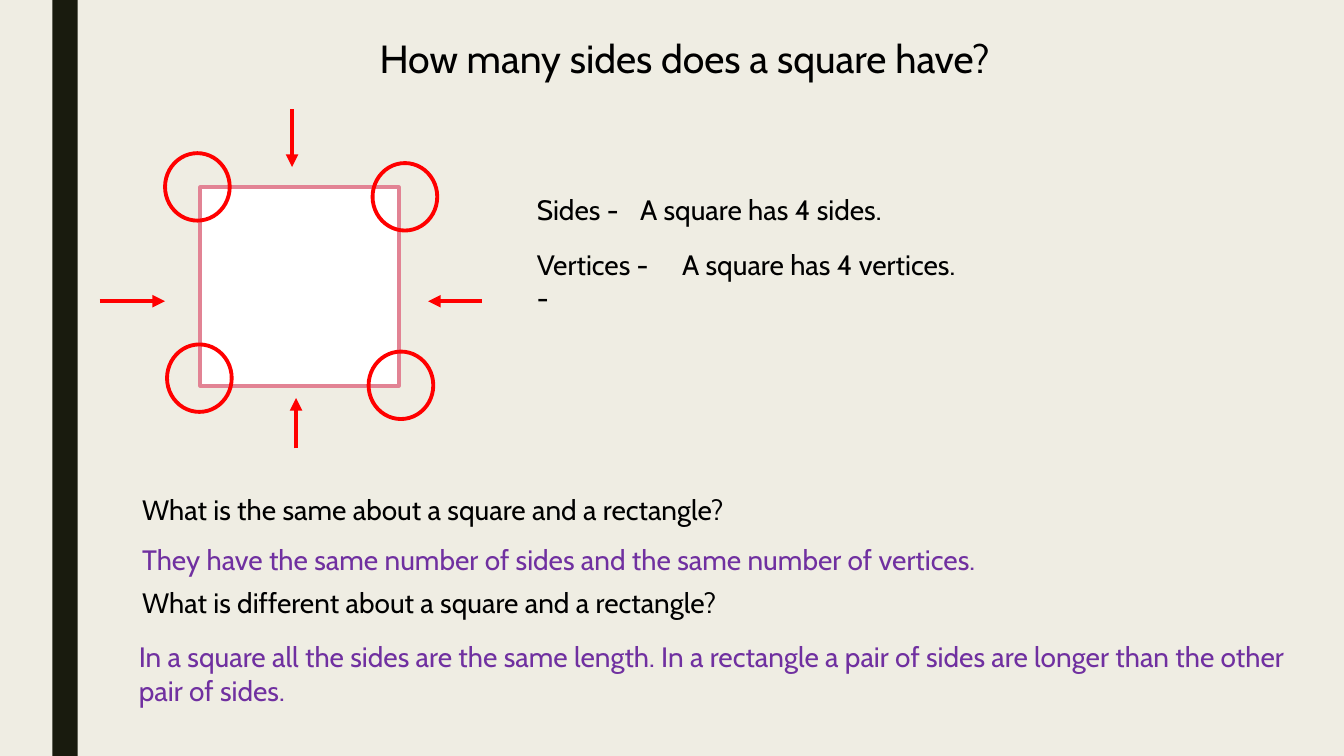
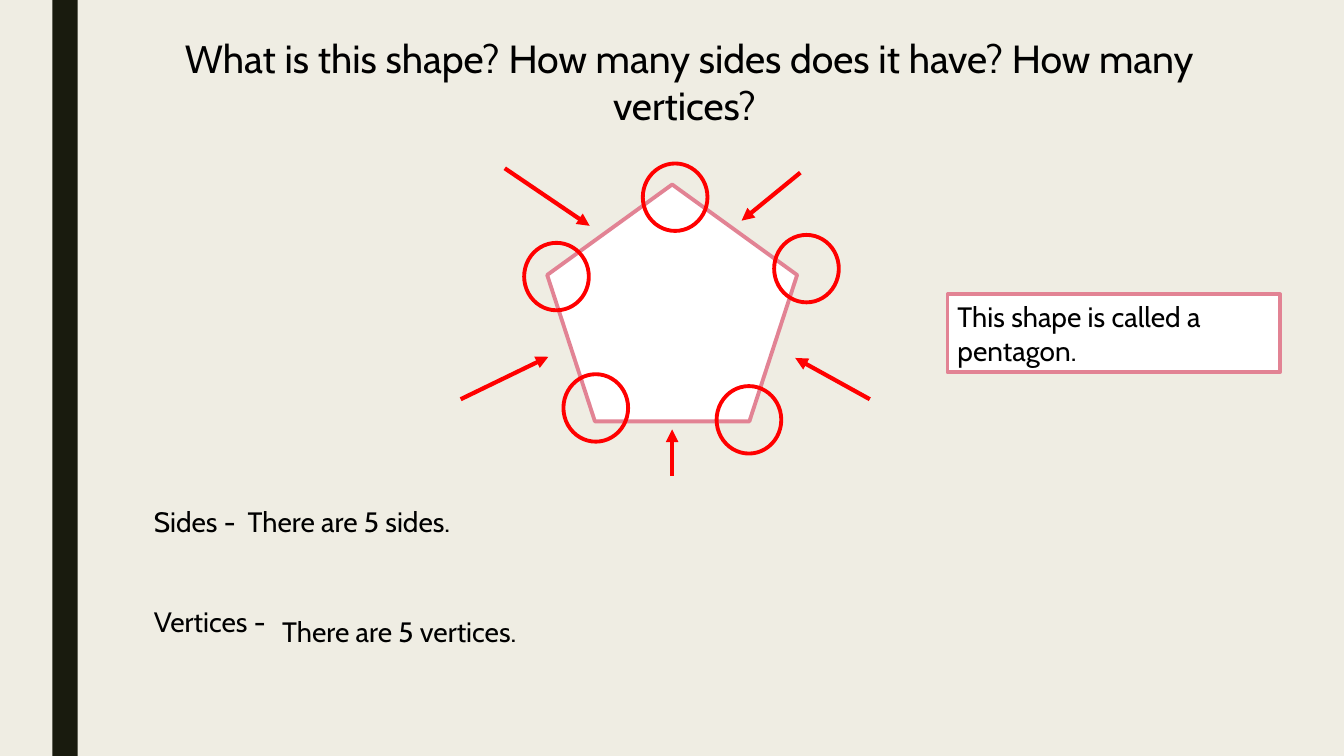
import pptx
import pptx.util
import pptx.dml.color
import pptx.enum.shapes
import pptx.enum.text
import pptx.oxml
import pptx.oxml.ns

Cm, Pt = pptx.util.Cm, pptx.util.Pt
RGBColor = pptx.dml.color.RGBColor
SHAPE = pptx.enum.shapes.MSO_SHAPE
ALIGN = pptx.enum.text.PP_ALIGN

CREAM = RGBColor(0xEF, 0xED, 0xE3)
DARK = RGBColor(0x19, 0x1B, 0x0E)
BLACK = RGBColor(0x00, 0x00, 0x00)
WHITE = RGBColor(0xFF, 0xFF, 0xFF)
PINK = RGBColor(0xE2, 0x83, 0x94)
RED = RGBColor(0xFF, 0x00, 0x00)
PURPLE = RGBColor(0x70, 0x30, 0xA0)

FONT = "Cabin"
WIDE, HIGH = 33.87, 19.05
RING_W, RING_H = 1.63, 1.7
ROW_H = 1.12


def add_form(slide, kind, left, top, width, height, fill=None, line=None):
    """Add a preset shape, in centimetres."""
    form = slide.shapes.add_shape(kind, Cm(left), Cm(top), Cm(width), Cm(height))
    form.shadow.inherit = False
    if fill is None:
        form.fill.background()
    else:
        form.fill.solid()
        form.fill.fore_color.rgb = fill
    if line is None:
        form.line.fill.background()
    else:
        form.line.color.rgb = line
        form.line.width = Pt(2.75)
    return form


def write(form, text, size=20, color=BLACK, align=ALIGN.LEFT):
    """Put one paragraph into a shape or text box."""
    frame = form.text_frame
    frame.word_wrap = True
    frame.auto_size = pptx.enum.text.MSO_AUTO_SIZE.SHAPE_TO_FIT_TEXT
    frame.text = text
    line = frame.paragraphs[0]
    line.alignment = align
    line.font.name = FONT
    line.font.size = Pt(size)
    line.font.color.rgb = color


def add_label(slide, left, top, width, height, text, **style):
    box = slide.shapes.add_textbox(Cm(left), Cm(top), Cm(width), Cm(height))
    write(box, text, **style)


def add_arrow(slide, x1, y1, x2, y2):
    arrow = slide.shapes.add_connector(
        pptx.enum.shapes.MSO_CONNECTOR.STRAIGHT, Cm(x1), Cm(y1), Cm(x2), Cm(y2))
    arrow.line.color.rgb = RED
    arrow.line.width = Pt(3)
    # Arrowhead at the far end, no shadow
    head = pptx.oxml.parse_xml(
        '<a:tailEnd %s type="triangle"/>' % pptx.oxml.ns.nsdecls("a"))
    arrow.line._get_or_add_ln().append(head)
    flat = pptx.oxml.parse_xml("<a:effectLst %s/>" % pptx.oxml.ns.nsdecls("a"))
    arrow.element.spPr.append(flat)


def set_master(deck, slide):
    """Give the master its background and the dark band."""
    master = deck.slide_master
    master.background.fill.solid()
    master.background.fill.fore_color.rgb = CREAM
    band = add_form(slide, SHAPE.RECTANGLE, 1.32, 0, 0.64, HIGH, fill=DARK)
    band.element.nvSpPr.cNvPr.set("id", "20")
    master.shapes.element.append(band.element)


def add_title(slide, text, height):
    add_label(slide, 3.63, 0.74, 27.46, height, text, size=28, align=ALIGN.CENTER)


def add_figure(slide, kind, left, top, width, height, arrows, rings):
    """Draw an outline with arrows at its sides and rings at its corners."""
    add_form(slide, kind, left, top, width, height, fill=WHITE, line=PINK)
    for x1, y1, x2, y2 in arrows:
        add_arrow(slide, left + x1, top + y1, left + x2, top + y2)
    for x, y in rings:
        add_form(slide, SHAPE.OVAL, left + x, top + y, RING_W, RING_H, line=RED)


def add_facts(slide, left, top, rows):
    """Place rows of (x, y, width, text, colour) from a corner."""
    for x, y, width, text, color in rows:
        add_label(slide, left + x, top + y, width, ROW_H, text, color=color)


def fill_square(slide):
    add_title(slide, "How many sides does a square have? ", 1.45)
    add_figure(
        slide, SHAPE.RECTANGLE, 5.05, 4.72, 5, 5,
        arrows=[(2.31, -1.96, 2.31, -0.51), (-2.54, 2.87, -0.89, 2.87),
                (7.09, 2.87, 5.74, 2.87), (2.41, 6.58, 2.41, 5.31)],
        rings=[(-0.89, -0.86), (4.34, -0.61), (-0.84, 3.96), (4.24, 4.14)])
    # Counts
    add_facts(slide, 13.28, 4.72, [
        (0, 0, 3.02, "Sides -", BLACK),
        (2.6, 0, 16.41, "A square has 4 sides.", BLACK),
        (0, 1.38, 3.63, "Vertices -\v-", BLACK),
        (3.66, 1.38, 16.41, "A square has 4 vertices.", BLACK)])
    # Questions and answers
    add_facts(slide, 3.33, 12.29, [
        (0, 0, 29.54, "What is the same about a square and a rectangle?", BLACK),
        (0, 1.25, 29.54, "They have the same number of sides and the same "
         "number of vertices.", PURPLE),
        (0, 2.34, 29.54, "What is different about a square and a rectangle?", BLACK),
        (-0.08, 3.71, 29.54, "In a square all the sides are the same length. In a "
         "rectangle a pair of sides are longer than the other pair of sides.",
         PURPLE)])


def fill_pentagon(slide):
    add_title(slide, "What is this shape? How many sides does it have? "
              "How many vertices? ", 2.64)
    add_figure(
        slide, SHAPE.REGULAR_PENTAGON, 13.79, 4.65, 6.3, 5.97,
        arrows=[(-1.07, -0.41, 1.07, 1.04), (-2.18, 5.41, 0.03, 4.34),
                (3.15, 7.34, 3.15, 6.17), (8.13, 5.41, 6.25, 4.37),
                (6.38, -0.3, 4.9, 0.91)],
        rings=[(2.41, -0.53), (5.72, 1.27), (4.27, 5.08), (0.41, 4.78),
               (-0.58, 1.47)])
    # Counts
    add_facts(slide, 3.63, 12.6, [
        (0, 0, 3.02, "Sides -", BLACK),
        (2.36, 0, 25.63, "There are 5 sides.", BLACK),
        (0, 2.51, 3.94, "Vertices -", BLACK),
        (3.23, 2.77, 7.34, "There are 5 vertices.", BLACK)])
    # Name of the shape
    name = add_form(slide, SHAPE.RECTANGLE, 23.88, 7.42, 8.38, 1.96,
                    fill=WHITE, line=PINK)
    write(name, "This shape is called a pentagon.")


def main():
    deck = pptx.Presentation()
    deck.slide_width, deck.slide_height = Cm(WIDE), Cm(HIGH)
    blank = deck.slide_layouts[6]
    first, second = [deck.slides.add_slide(blank) for _ in range(2)]
    set_master(deck, first)
    fill_square(first)
    fill_pentagon(second)
    deck.save("out.pptx")


if __name__ == "__main__":
    main()
